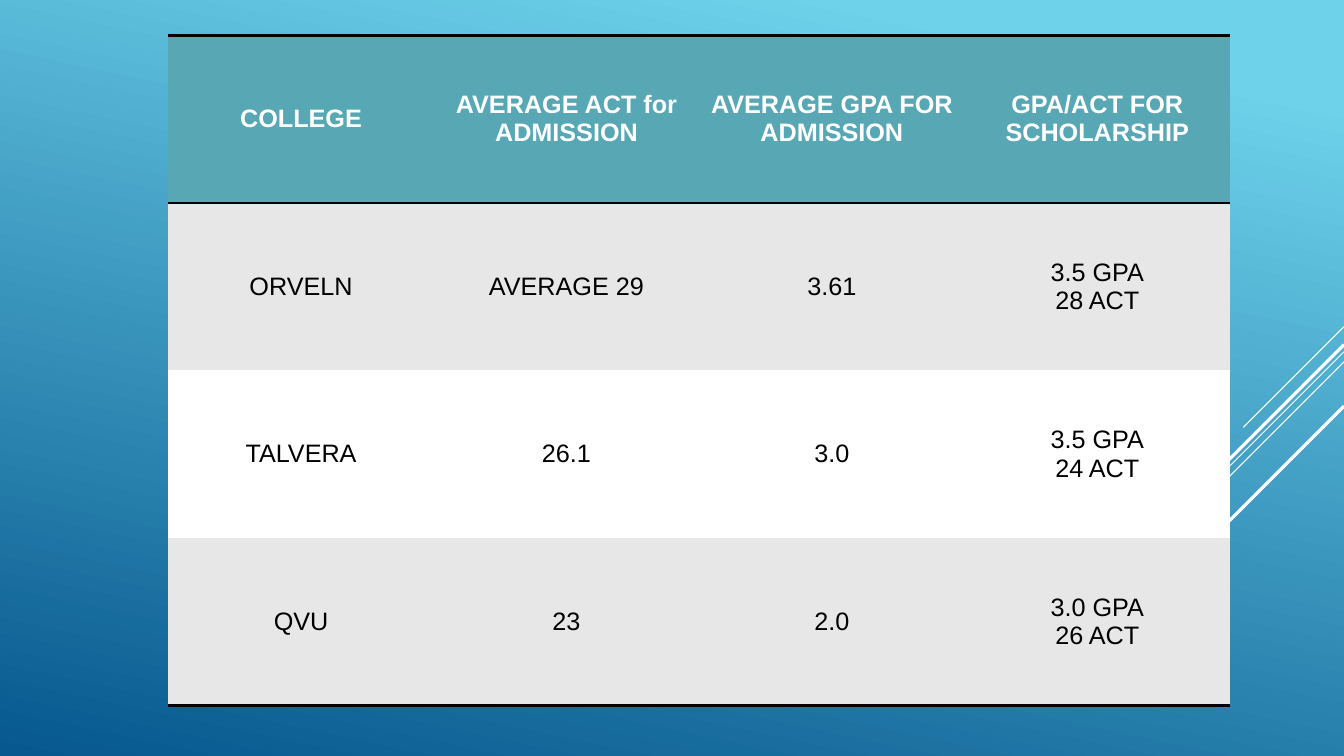
from dataclasses import dataclass

from pptx import Presentation
from pptx.dml.color import RGBColor
from pptx.enum.shapes import MSO_CONNECTOR
from pptx.enum.text import MSO_ANCHOR, PP_ALIGN
from pptx.oxml.ns import qn
from pptx.util import Inches, Pt
from lxml.etree import SubElement


@dataclass(frozen=True)
class Theme:
    font: str = "Arial"
    size: int = 18
    sky: str = "6ED2EB"
    deep: str = "06588E"
    header: str = "57A7B5"
    band: str = "E7E7E7"
    white: str = "FFFFFF"
    black: str = "000000"
    rule: float = 2
    thin: float = 0.75
    thick: float = 2.25


class SlideBuilder:
    def __init__(self, s, theme):
        self.s = s
        self.theme = theme

    def background(self, angle):
        fill = self.s.background.fill
        fill.gradient()
        fill.gradient_angle = 360 - angle
        stops = ((0.1, self.theme.sky), (1, self.theme.deep))
        for stop, (position, color) in zip(fill.gradient_stops, stops):
            stop.position = position
            stop.color.rgb = RGBColor.from_string(color)

    def diagonal(self, right, top, run, width):
        line = self.s.shapes.add_connector(
            MSO_CONNECTOR.STRAIGHT,
            Inches(right), Inches(top), Inches(right - run), Inches(top + run),
        )
        line.line.color.rgb = RGBColor.from_string(self.theme.white)
        line.line.width = Pt(width)
        SubElement(line._element.spPr, qn("a:effectLst"))

    def borders(self, cell, ruled):
        tcPr = cell._tc.get_or_add_tcPr()
        for side in ("L", "R", "T", "B"):
            ln = SubElement(tcPr, qn(f"a:ln{side}"))
            if side in ruled:
                ln.set("w", str(Pt(self.theme.rule)))
                solid = SubElement(ln, qn("a:solidFill"))
                SubElement(solid, qn("a:srgbClr")).set("val", self.theme.black)
            else:
                ln.set("w", "0")
                SubElement(ln, qn("a:noFill"))

    def cell(self, cell, text, fill, color, bold, ruled):
        self.borders(cell, ruled)
        cell.fill.solid()
        cell.fill.fore_color.rgb = RGBColor.from_string(fill)
        cell.vertical_anchor = MSO_ANCHOR.MIDDLE
        tf = cell.text_frame
        for i, words in enumerate(text.split("\n")):
            p = tf.add_paragraph() if i else tf.paragraphs[0]
            p.alignment = PP_ALIGN.CENTER
            r = p.add_run()
            r.text = words
            r.font.name = self.theme.font
            r.font.size = Pt(self.theme.size)
            r.font.bold = bold
            r.font.color.rgb = RGBColor.from_string(color)

    def table(self, rows, left, top, width, height):
        t = self.theme
        table = self.s.shapes.add_table(
            len(rows), len(rows[0]),
            Inches(left), Inches(top), Inches(width), Inches(height),
        ).table
        for i, row in enumerate(rows):
            header = i == 0
            fill = t.header if header else t.band if i % 2 else t.white
            color = t.white if header else t.black
            ruled = {0: "TB", 1: "T", len(rows) - 1: "B"}.get(i, "")
            for j, text in enumerate(row):
                self.cell(table.cell(i, j), text, fill, color, header, ruled)


COLLEGES = [
    ("COLLEGE", "AVERAGE ACT for ADMISSION", "AVERAGE GPA FOR ADMISSION",
     "GPA/ACT FOR SCHOLARSHIP"),
    ("ORVELN", "AVERAGE 29", "3.61", "3.5 GPA\n28 ACT"),
    ("TALVERA", "26.1", "3.0", "3.5 GPA\n24 ACT"),
    ("QVU", "23", "2.0", "3.0 GPA\n26 ACT"),
]


def main():
    prs = Presentation()
    prs.slide_width, prs.slide_height = Inches(13.33), Inches(7.5)
    theme = Theme()
    slide = SlideBuilder(prs.slides.add_slide(prs.slide_layouts[6]), theme)
    slide.background(102)
    for top, run, width in (
        (3.24, 1, theme.thin),
        (3.49, 3.26, theme.thin),
        (3.59, 2.07, theme.thin),
        (3.42, 1.91, theme.thick),
        (4.03, 1.39, theme.thick),
    ):
        slide.diagonal(13.33, top, run, width)
    slide.table(COLLEGES, 1.67, 0.35, 10.53, 6.65)
    prs.save("out.pptx")


if __name__ == "__main__":
    main()
